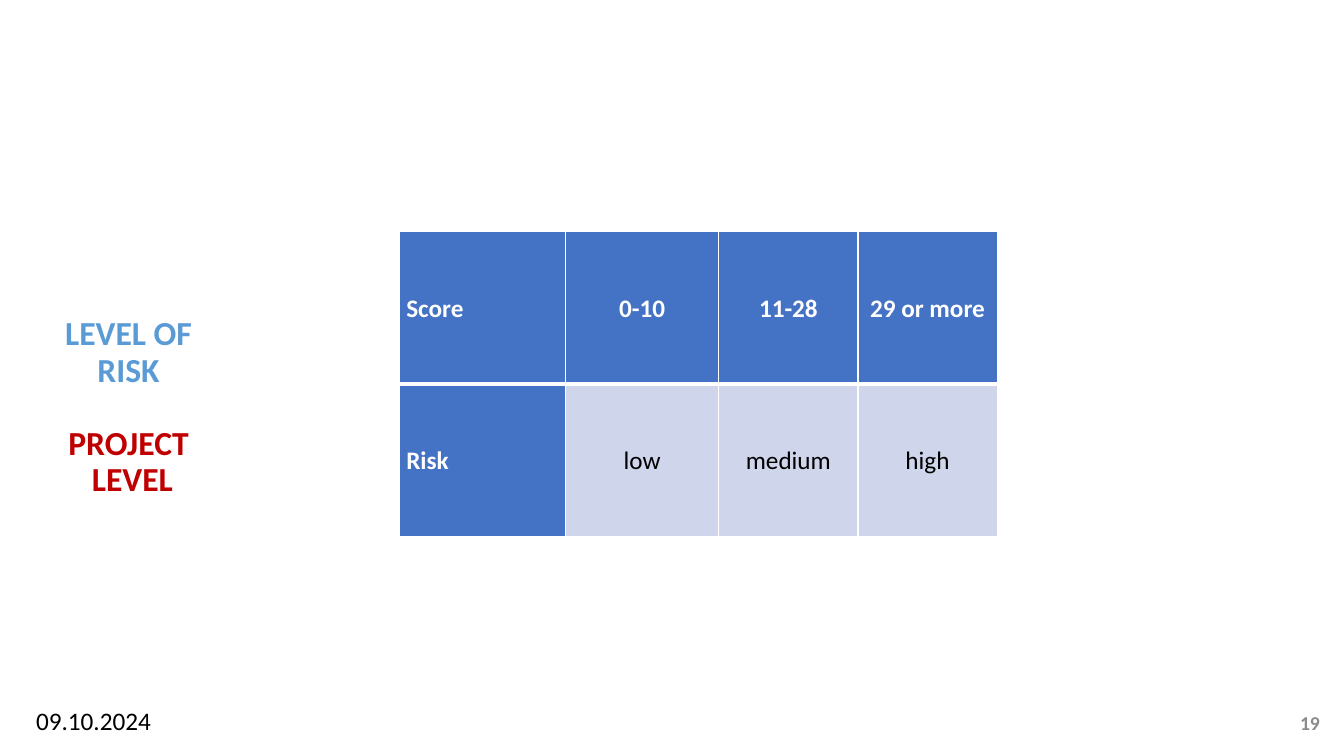
from dataclasses import dataclass

from lxml.etree import SubElement
from pptx import Presentation
from pptx.dml.color import RGBColor
from pptx.enum.text import MSO_ANCHOR, PP_ALIGN
from pptx.oxml.ns import qn
from pptx.util import Inches, Pt


@dataclass(frozen=True)
class Theme:
    font: str = "Calibri"
    heading_size: float = 24
    body_size: float = 18
    number_size: float = 14
    black: str = "000000"
    white: str = "FFFFFF"
    gray: str = "8C8C8C"
    light_blue: str = "5B9BD5"
    red: str = "C00000"
    header_fill: str = "4472C4"
    body_fill: str = "CFD5EA"
    rule: float = 1
    header_rule: float = 3


THEME = Theme()


def write(paragraph, text, *, size=THEME.body_size, color=THEME.black, bold=False,
          align=PP_ALIGN.LEFT, spacing=1.0, before=0):
    """Put formatted text in a paragraph."""
    paragraph.alignment = align
    paragraph.line_spacing = spacing
    paragraph.space_before = Pt(before)
    run = paragraph.add_run()
    run.text = text
    run.font.name = THEME.font
    run.font.size = Pt(size)
    run.font.bold = bold
    run.font.color.rgb = RGBColor.from_string(color)


class SlideBuilder:
    def __init__(self, slide, theme):
        self.slide = slide
        self.theme = theme

    def text(self, left, top, width, height, lines, anchor=MSO_ANCHOR.TOP, **style):
        """Add a text box; each line is its text and its own format."""
        box = self.slide.shapes.add_textbox(*map(Inches, (left, top, width, height)))
        frame = box.text_frame
        frame.word_wrap = True
        frame.vertical_anchor = anchor
        for index, (line, own_style) in enumerate(lines):
            paragraph = frame.add_paragraph() if index else frame.paragraphs[0]
            write(paragraph, line, **{**style, **own_style})

    def borders(self, cell, **widths):
        """Draw the cell edges, which come before the fill in the cell's XML."""
        properties = cell._tc.get_or_add_tcPr()
        for edge, width in widths.items():
            line = SubElement(properties, qn(f"a:ln{edge}"), w=str(Pt(width)))
            SubElement(SubElement(line, qn("a:solidFill")), qn("a:srgbClr"),
                       val=self.theme.white)

    def table(self, left, top, column_widths, row_height, rows):
        theme = self.theme
        table = self.slide.shapes.add_table(
            len(rows), len(column_widths), Inches(left), Inches(top),
            Inches(sum(column_widths)), Inches(row_height * len(rows))).table
        for column, width in zip(table.columns, column_widths):
            column.width = Inches(width)
        for r, row in enumerate(rows):
            table.rows[r].height = Inches(row_height)
            for c, value in enumerate(row):
                cell = table.cell(r, c)
                heading = r == 0 or c == 0
                cell.margin_left = cell.margin_right = Inches(0.07)
                cell.margin_top = cell.margin_bottom = 0
                cell.vertical_anchor = MSO_ANCHOR.MIDDLE
                self.borders(cell, L=theme.rule, R=theme.rule,
                             T=theme.header_rule if r == 1 else theme.rule,
                             B=theme.header_rule if r == 0 else theme.rule)
                cell.fill.solid()
                cell.fill.fore_color.rgb = RGBColor.from_string(
                    theme.header_fill if heading else theme.body_fill)
                write(cell.text_frame.paragraphs[0], value, bold=heading,
                      color=theme.white if heading else theme.black, spacing=1.07,
                      align=PP_ALIGN.CENTER if c else PP_ALIGN.LEFT)


def main():
    deck = Presentation()
    deck.slide_width, deck.slide_height = Inches(13.33), Inches(7.5)
    page = SlideBuilder(deck.slides.add_slide(deck.slide_layouts[6]), THEME)

    # Footer: page number and date
    page.text(12.66, 6.98, 0.53, 0.38, [("19", {})], anchor=MSO_ANCHOR.MIDDLE,
              size=THEME.number_size, color=THEME.gray, bold=True, align=PP_ALIGN.RIGHT)
    page.text(0.26, 6.95, 1.84, 0.4, [("09.10.2024", {})])

    # Side heading
    page.text(0.52, 3.37, 1.51, 1.35,
              [("LEVEL OF RISK", {"color": THEME.light_blue}),
               ("PROJECT", {"before": 26.4}),
               (" LEVEL", {})],
              anchor=MSO_ANCHOR.MIDDLE, size=THEME.heading_size, color=THEME.red,
              bold=True, align=PP_ALIGN.CENTER, spacing=0.9)

    # Risk by score
    page.table(3.96, 2.3, [1.65, 1.52, 1.38, 1.38], 1.51,
               [["Score", "0-10", "11-28", "29 or more"],
                ["Risk", "low", "medium", "high"]])

    deck.save("out.pptx")


if __name__ == "__main__":
    main()
